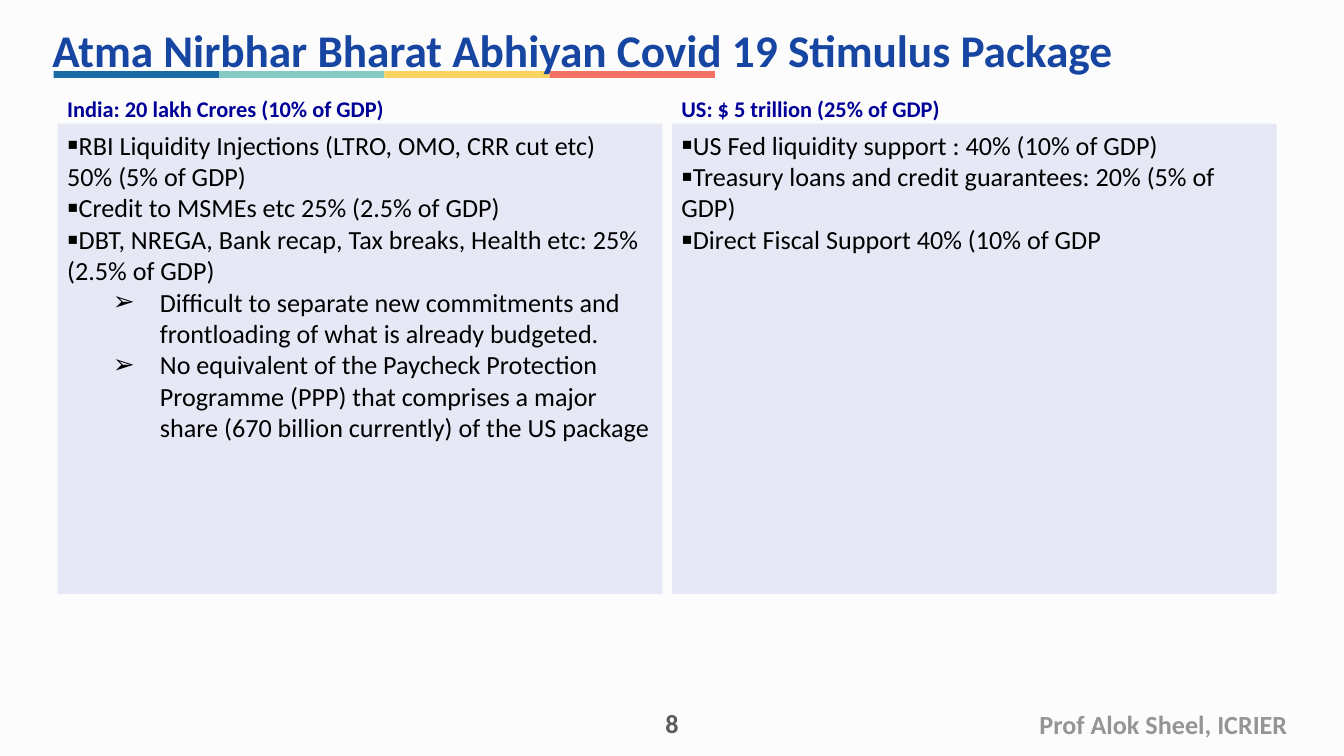
from lxml.etree import SubElement
from pptx import Presentation
from pptx.dml.color import RGBColor
from pptx.enum.shapes import MSO_SHAPE as Shape
from pptx.enum.text import MSO_ANCHOR as Anchor, PP_ALIGN as Align
from pptx.oxml.ns import qn
from pptx.util import Inches, Pt


def paint(fmt, color):
    fmt.solid()
    fmt.fore_color.rgb = RGBColor.from_string(color)


def write(box, lines, size, color, bold=False, align=Align.LEFT,
          anchor=Anchor.MIDDLE, left=0.07, right=0.07, edge=0.04):
    """Fill a box; each line is (text, level), level None for no bullet."""
    frame = box.text_frame
    form = {"word_wrap": True, "vertical_anchor": anchor,
            "margin_left": Inches(left), "margin_right": Inches(right),
            "margin_top": Inches(edge), "margin_bottom": Inches(edge)}
    for key, val in form.items():
        setattr(frame, key, val)
    for i, (text, level) in enumerate(lines):
        para = frame.paragraphs[0] if i == 0 else frame.add_paragraph()
        para.text = text
        para.alignment = align
        if level is not None:
            mark, scale, margin, indent = marks[level]
            para.level = level
            props = para._p.get_or_add_pPr()
            props.set("marL", str(Inches(margin)))
            props.set("indent", str(Inches(indent)))
            SubElement(props, qn("a:buSzPct"), val=str(scale * 1000))
            SubElement(props, qn("a:buFont"), typeface="Arial")
            SubElement(props, qn("a:buChar"), char=mark)
        for run in para.runs:
            font = {"name": "Calibri", "size": Pt(size), "bold": bold}
            for key, val in font.items():
                setattr(run.font, key, val)
            paint(run.font.fill, color)


# Bullet of each level: sign, size in percent, margin, indent
marks = [("▪", 125, 0, 0), ("➢", 100, 0.69, -0.35)]

# Widescreen deck, 16 to 9
deck = Presentation()
deck.slide_width = Inches(10)
deck.slide_height = Inches(10 * 9 / 16)
slide = deck.slides.add_slide(deck.slide_layouts[6])
paint(slide.background.fill, "FCFCFC")
shapes = slide.shapes

# Four-colour rule under the title
wide = 1.23
for i, color in enumerate(["1B6AA3", "84CBC5", "F8D35E", "F47264"]):
    bar = shapes.add_shape(Shape.RECTANGLE, Inches(0.4 + i * wide),
                           Inches(0.53), Inches(wide), Inches(0.05))
    bar.shadow.inherit = False
    bar.line.fill.background()
    paint(bar.fill, color)

# Title
title = shapes.add_textbox(Inches(0.32), Inches(0.21), Inches(9.43), Inches(0.32))
write(title, [("Atma Nirbhar Bharat Abhiyan Covid 19 Stimulus Package", None)],
      24.3, "1645A2", bold=True)

# Two countries: heading over a panel
lands = [
    (0.43, "India: 20 lakh Crores (10% of GDP)", [
        ("RBI Liquidity Injections (LTRO, OMO, CRR cut etc) \v50% (5% of GDP)", 0),
        ("Credit to MSMEs etc 25% (2.5% of GDP)", 0),
        ("DBT, NREGA, Bank recap, Tax breaks, Health etc: 25% (2.5% of GDP)", 0),
        ("Difficult to separate new commitments and frontloading of what is "
         "already budgeted.", 1),
        ("No equivalent of the Paycheck Protection Programme (PPP) that comprises "
         "a major share (670 billion currently) of the US package", 1)]),
    (5, "US: $ 5 trillion (25% of GDP)", [
        ("US Fed liquidity support : 40% (10% of GDP)", 0),
        ("Treasury loans and credit guarantees: 20% (5% of GDP)", 0),
        ("Direct Fiscal Support 40% (10% of GDP", 0)]),
]
for x, name, points in lands:
    panel = shapes.add_shape(Shape.RECTANGLE, Inches(x), Inches(0.92),
                             Inches(4.5), Inches(3.5))
    panel.shadow.inherit = False
    panel.line.fill.background()
    paint(panel.fill, "E7E8F6")
    write(panel, points, 14, "000000", anchor=Anchor.TOP)
    head = shapes.add_textbox(Inches(x), Inches(0.69), Inches(4.23), Inches(0.24))
    write(head, [(name, None)], 12, "000099", bold=True)

# Footer: page number and author
page = shapes.add_textbox(Inches(4.75), Inches(5.25), Inches(0.5), Inches(0.3))
write(page, [("8", None)], 14, "5C5C5C", bold=True, align=Align.CENTER,
      anchor=Anchor.BOTTOM, left=0.1, right=0.1, edge=0.05)
author = shapes.add_textbox(Inches(7.72), Inches(5.22), Inches(1.96), Inches(0.34))
write(author, [("Prof Alok Sheel, ICRIER", None)], 14, "959595", bold=True,
      align=Align.RIGHT, anchor=Anchor.TOP, left=0, right=0.1, edge=0.05)

deck.save("out.pptx")
